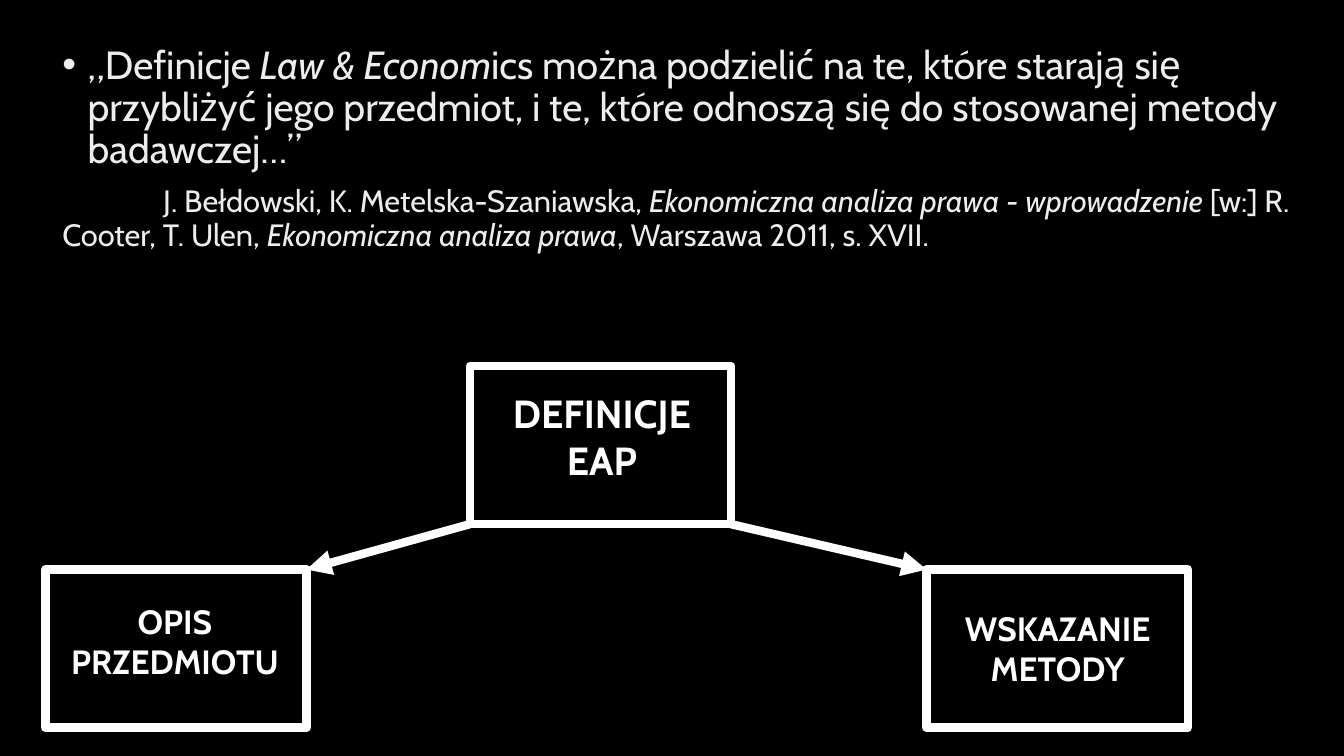
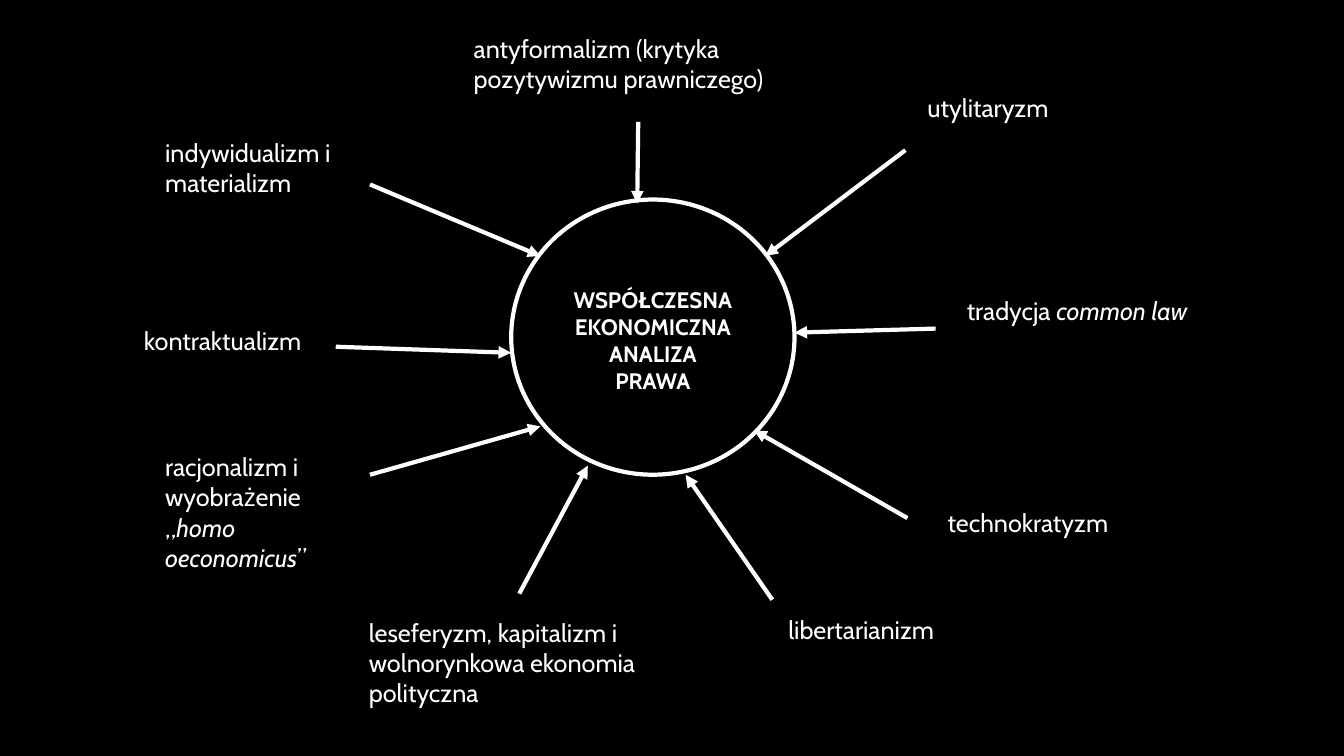
from lxml import etree
from pptx import Presentation
from pptx.dml.color import RGBColor
from pptx.enum.shapes import MSO_CONNECTOR, MSO_SHAPE
from pptx.enum.text import PP_ALIGN
from pptx.oxml.ns import qn
from pptx.util import Inches, Pt

RECTANGLE = MSO_SHAPE.RECTANGLE
ELLIPSE = MSO_SHAPE.OVAL
STRAIGHT = MSO_CONNECTOR.STRAIGHT
LEFT = PP_ALIGN.LEFT
CENTER = PP_ALIGN.CENTER

FONT = "Cabin"
COLORS = {"background": "000000", "main": "FFFFFF", "quote": "EDEDED"}
THICK, THIN = 6, 3
BOX_WIDTH, BOX_HEIGHT = 2.59, 1.57

QUOTE = [
    ("„Definicje ", False),
    ("Law & Econom", True),
    ("ics można podzielić na te, które starają się przybliżyć jego przedmiot, "
     "i te, które odnoszą się do stosowanej metody badawczej…”", False),
]
CITATION = [
    ("J. Bełdowski, K. Metelska-Szaniawska, ", False),
    ("Ekonomiczna analiza prawa - wprowadzenie ", True),
    ("[w:] R. Cooter, T. Ulen, ", False),
    ("Ekonomiczna analiza prawa", True),
    (", Warszawa 2011, s. XVII.", False),
]

DEFINITION_BOXES = [(4.66, 3.63), (0.45, 5.65), (9.19, 5.65)]
DEFINITION_LABELS = [
    ("DEFINICJE EAP", (4.93, 3.81, 2.08, 1.04), 28),
    ("OPIS PRZEDMIOTU", (0.52, 5.91, 2.43, 0.91), 24),
    ("WSKAZANIE METODY", (9.45, 5.98, 2.08, 0.91), 24),
]

INFLUENCES = [
    ([("antyformalizm (krytyka pozytywizmu prawniczego)", False)],
     (4.6, 0.28, 3.64, 0.71), (6.33, 1.21), (6.32, 2.02)),
    ([("utylitaryzm", False)],
     (9.1, 0.87, 2.03, 0.4), (8.98, 1.49), (7.59, 2.54)),
    ([("tradycja ", False), ("common law", True)],
     (9.49, 2.88, 2.75, 0.4), (9.28, 3.26), (7.88, 3.3)),
    ([("technokratyzm", False)],
     (9.3, 4.98, 2.03, 0.4), (9, 5.14), (7.48, 4.27)),
    ([("libertarianizm", False)],
     (7.72, 6.05, 2.03, 0.4), (7.66, 5.95), (6.8, 4.71)),
    ([("leseferyzm, kapitalizm i wolnorynkowa ekonomia polityczna", False)],
     (3.56, 6.07, 2.98, 1.01), (5.15, 5.89), (5.83, 4.62)),
    ([("racjonalizm i wyobrażenie „", False), ("homo oeconomicus", True),
      ("”", False)],
     (1.54, 4.43, 2.03, 1.31), (3.67, 4.71), (5.36, 4.23)),
    ([("kontraktualizm", False)],
     (1.33, 3.18, 2.03, 0.4), (3.33, 3.44), (5.07, 3.5)),
    ([("indywidualizm i materializm", False)],
     (1.54, 1.31, 2.03, 0.71), (3.67, 1.83), (5.36, 2.54)),
]


def color(name):
    """Return a palette colour."""
    return RGBColor.from_string(COLORS[name])


def add_spans(para, spans, size, bold=False, tint="main"):
    """Add (text, italic) spans to a paragraph."""
    for text, italic in spans:
        span = para.add_run()
        span.text = text
        font = span.font
        font.name, font.size = FONT, Pt(size)
        font.bold, font.italic = bold, italic
        font.color.rgb = color(tint)


def add_frame(page, place):
    """Add an empty wrapping text box and return its text frame."""
    box = page.shapes.add_textbox(*map(Inches, place))
    box.text_frame.word_wrap = True
    return box.text_frame


def add_label(page, spans, place, size, bold=False, align=LEFT):
    """Add a one-paragraph label."""
    para = add_frame(page, place).paragraphs[0]
    para.alignment = align
    add_spans(para, spans, size, bold)


def set_indent(para, margin, first_line, bullet=None):
    """Set the left margin, first-line indent and optional bullet."""
    props = para._p.get_or_add_pPr()
    props.set("marL", str(Inches(margin)))
    props.set("indent", str(Inches(first_line)))
    if bullet:
        etree.SubElement(props, qn("a:buFont")).set("typeface", "Arial")
        etree.SubElement(props, qn("a:buChar")).set("char", bullet)
    para.line_spacing = 0.9


def add_outline(page, kind, place, weight):
    """Add an unfilled outlined shape."""
    shape = page.shapes.add_shape(kind, *map(Inches, place))
    shape.shadow.inherit = False
    shape.fill.background()
    shape.line.color.rgb = color("main")
    shape.line.width = Pt(weight)


def add_arrow(page, start, end, weight):
    """Add a straight arrow from start to end."""
    arrow = page.shapes.add_connector(STRAIGHT, *map(Inches, (*start, *end)))
    arrow.line.color.rgb = color("main")
    arrow.line.width = Pt(weight)
    line = arrow.line._get_or_add_ln()
    etree.SubElement(line, qn("a:tailEnd")).set("type", "triangle")
    etree.SubElement(arrow._element.spPr, qn("a:effectLst"))


def add_page(deck):
    """Add a blank page."""
    return deck.slides.add_slide(deck.slide_layouts[6])


def build_definitions(page):
    """Build the quotation and the tree of definitions."""
    frame = add_frame(page, (0.52, 0.4, 12.39, 2.66))
    quote, citation = frame.paragraphs[0], frame.add_paragraph()
    set_indent(quote, 0.25, -0.25, "•")
    add_spans(quote, QUOTE, 28, tint="quote")
    set_indent(citation, 0, 1)
    citation.space_before = Pt(10)
    add_spans(citation, CITATION, 22, tint="quote")

    for left, top in DEFINITION_BOXES:
        add_outline(page, RECTANGLE, (left, top, BOX_WIDTH, BOX_HEIGHT), THICK)
    (root_left, root_top), (subject_left, subject_top), method = DEFINITION_BOXES
    bottom = root_top + BOX_HEIGHT
    add_arrow(page, (root_left, bottom),
              (subject_left + BOX_WIDTH, subject_top), THICK)
    add_arrow(page, (root_left + BOX_WIDTH, bottom), method, THICK)
    for text, place, size in DEFINITION_LABELS:
        add_label(page, [(text, False)], place, size, True, CENTER)


def build_influences(page):
    """Build the circle and the influences pointing at it."""
    add_outline(page, ELLIPSE, (5.07, 1.98, 2.81, 2.73), THIN)
    add_label(page, [("WSPÓŁCZESNA EKONOMICZNA ANALIZA PRAWA", False)],
              (5.55, 2.79, 1.85, 1.18), 16, True, CENTER)
    for spans, place, start, end in INFLUENCES:
        add_label(page, spans, place, 18)
        add_arrow(page, start, end, THIN)


def main():
    """Build and save the deck."""
    deck = Presentation()
    deck.slide_width, deck.slide_height = Inches(13.33), Inches(7.5)
    backdrop = deck.slide_master.background.fill
    backdrop.solid()
    backdrop.fore_color.rgb = color("background")
    build_definitions(add_page(deck))
    build_influences(add_page(deck))
    deck.save("out.pptx")


if __name__ == "__main__":
    main()
